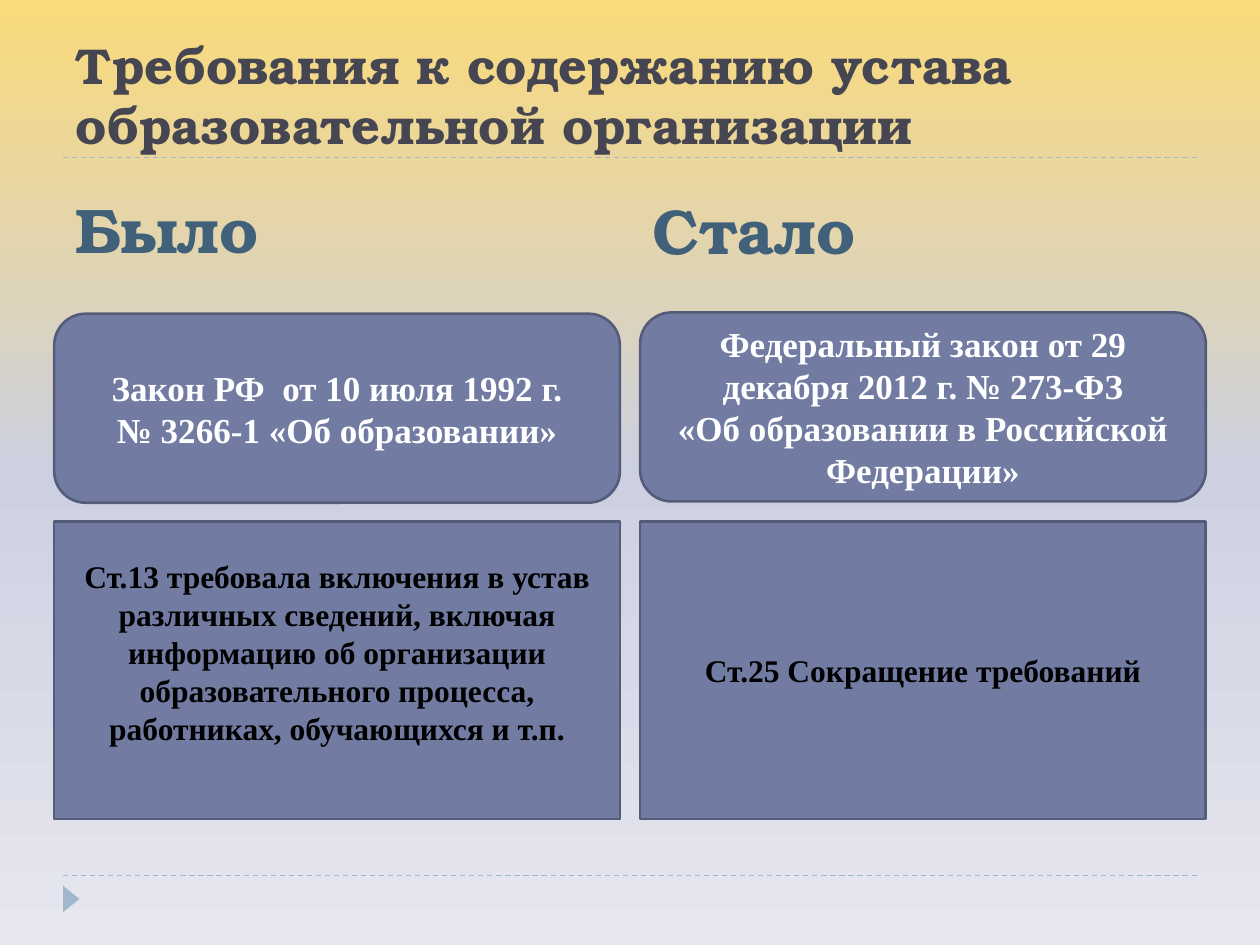
import copy

import pptx
from pptx.dml.color import RGBColor
from pptx.enum.dml import MSO_LINE
from pptx.enum.shapes import MSO_CONNECTOR, MSO_SHAPE
from pptx.enum.text import MSO_ANCHOR, MSO_AUTO_SIZE, PP_ALIGN
from pptx.oxml.ns import qn
from pptx.util import Inches, Pt

COLORS = {
    "sky_top": "FADA7A", "sky_middle": "CCD0E0", "sky_bottom": "E6E7EF",
    "accent": "9FB8CD", "title": "464653", "heading": "41617B",
    "card": "727CA3", "card_border": "545C79", "white": "FFFFFF", "black": "000000",
}
HEADING_FONT, CARD_FONT = "TeX Gyre Bonum", "Times New Roman"


def rgb(name):
    return RGBColor.from_string(COLORS[name])


def write(shape, text, font, size, color, align, anchor):
    frame = shape.text_frame
    frame.text = text
    frame.word_wrap = True
    frame.auto_size = MSO_AUTO_SIZE.NONE
    frame.vertical_anchor = anchor
    paragraph = frame.paragraphs[0]
    paragraph.alignment = align
    paragraph.font.name = font
    paragraph.font.size = Pt(size)
    paragraph.font.bold = True
    paragraph.font.color.rgb = rgb(color)
    return paragraph


presentation = pptx.Presentation()
presentation.slide_width, presentation.slide_height = Inches(10), Inches(7.5)
slide = presentation.slides.add_slide(presentation.slide_layouts.get_by_name("Comparison"))

# Background: three-stop vertical gradient
sky = slide.background.fill
sky.gradient()
sky.gradient_angle = 270
stop_list = slide.element.find(".//" + qn("a:gsLst"))
stop_list.insert(1, copy.deepcopy(stop_list[0]))
for stop, position, color in zip(sky.gradient_stops, (0, 0.5, 1),
                                 ("sky_top", "sky_middle", "sky_bottom")):
    stop.position = position
    stop.color.rgb = rgb(color)

# Dashed rules and corner marker
for y in (6.95, 1.25):
    rule = slide.shapes.add_connector(
        MSO_CONNECTOR.STRAIGHT, Inches(0.5), Inches(y), Inches(9.5), Inches(y))
    rule.line.color.rgb = rgb("accent")
    rule.line.width = Pt(0.75)
    rule.line.dash_style = MSO_LINE.DASH
    rule.element.spPr.append(rule.element.makeelement(qn("a:effectLst"), {}))

marker = slide.shapes.add_shape(
    MSO_SHAPE.ISOSCELES_TRIANGLE, Inches(0.46), Inches(7.07), Inches(0.21), Inches(0.13))
marker.rotation = 90
marker.shadow.inherit = False
marker.fill.solid()
marker.fill.fore_color.rgb = rgb("accent")
marker.line.fill.background()

# Title
title = slide.shapes.title
title.left, title.top, title.width, title.height = (
    Inches(0.5), Inches(0.25), Inches(9), Inches(1))
write(title, "Требования к содержанию устава образовательной организации",
      HEADING_FONT, 28.8, "title", PP_ALIGN.LEFT, MSO_ANCHOR.MIDDLE)

# Column headings
for index, text, left, top in ((1, "Было", 0.5, 1.41), (3, "Стало", 5.08, 1.42)):
    heading = slide.placeholders[index]
    heading.left, heading.top, heading.width, heading.height = (
        Inches(left), Inches(top), Inches(4.42), Inches(0.75))
    write(heading, text, HEADING_FONT, 36, "heading",
          PP_ALIGN.LEFT, MSO_ANCHOR.BOTTOM).space_before = Pt(6)

for index in (2, 4):
    unused = slide.placeholders[index].element
    unused.getparent().remove(unused)

# Cards: the law above, its requirement below (last value is the bottom inset)
LAW = (MSO_SHAPE.ROUNDED_RECTANGLE, 1.5, 20, "white")
REQUIREMENT = (MSO_SHAPE.RECTANGLE, 2.36, 18, "black")
cards = (
    (LAW, 0.43, 2.49, "Закон РФ  от 10 июля 1992 г.\v№ 3266-1 «Об образовании»", 0.05),
    (REQUIREMENT, 0.43, 4.14,
     "Ст.13 требовала включения в устав различных сведений, включая информацию "
     "об организации образовательного процесса, работниках, обучающихся и т.п.", 0.34),
    (LAW, 5.08, 2.48,
     "Федеральный закон от 29 декабря 2012 г. № 273-ФЗ\v"
     "«Об образовании в Российской Федерации»", 0.05),
    (REQUIREMENT, 5.08, 4.14, "Ст.25 Сокращение требований", 0.05),
)
for (outline, height, size, color), left, top, text, bottom_inset in cards:
    card = slide.shapes.add_shape(
        outline, Inches(left), Inches(top), Inches(4.49), Inches(height))
    card.shadow.inherit = False
    card.fill.solid()
    card.fill.fore_color.rgb = rgb("card")
    card.line.color.rgb = rgb("card_border")
    card.line.width = Pt(1.5)
    card.text_frame.margin_bottom = Inches(bottom_inset)
    write(card, text, CARD_FONT, size, color, PP_ALIGN.CENTER, MSO_ANCHOR.MIDDLE)

presentation.save("out.pptx")
